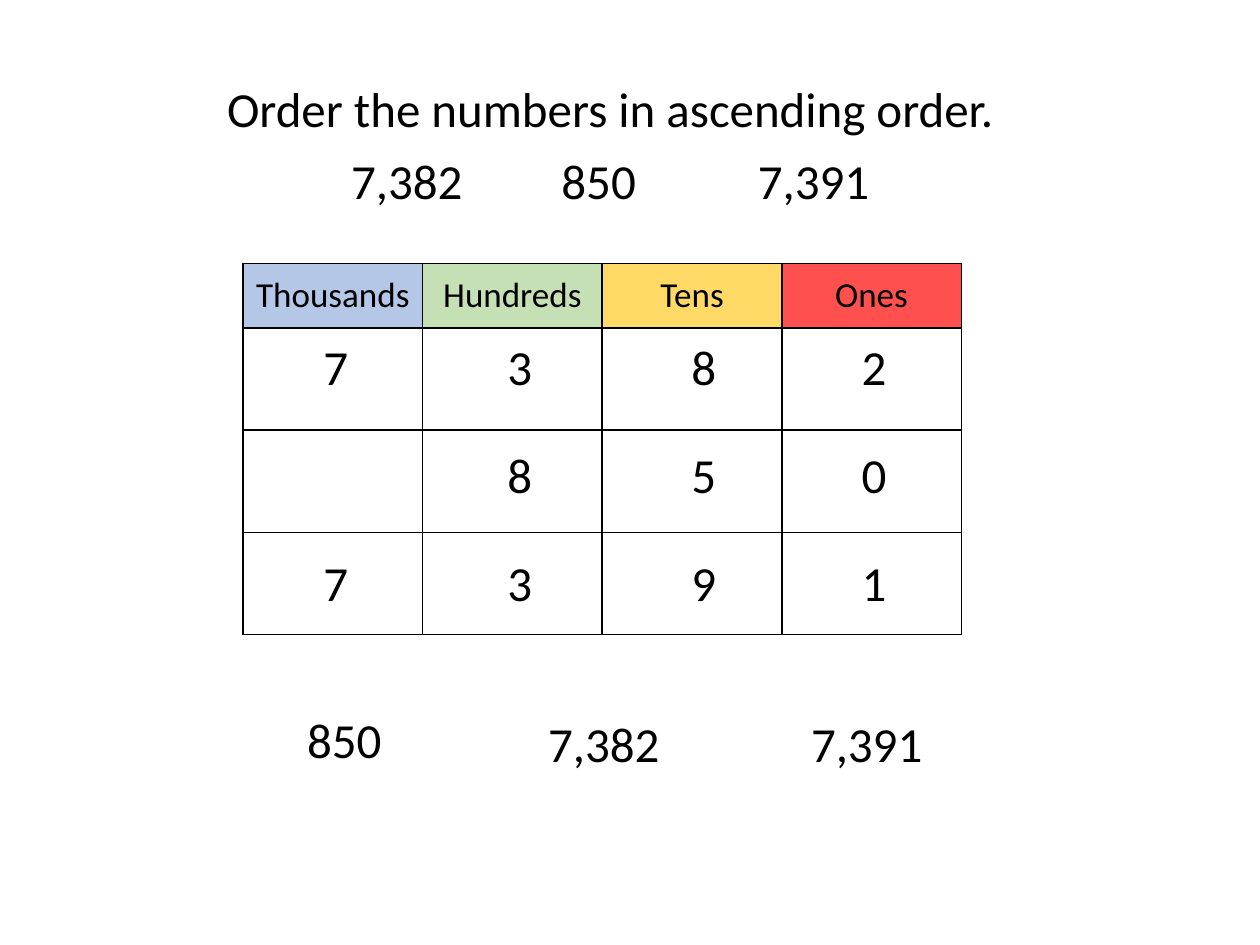
from typing import NamedTuple

from lxml.etree import SubElement
from pptx import Presentation
from pptx.dml.color import RGBColor
from pptx.enum.text import MSO_ANCHOR, MSO_AUTO_SIZE, PP_ALIGN
from pptx.oxml.ns import qn
from pptx.util import Cm, Pt

BLACK = RGBColor(0x00, 0x00, 0x00)
BLUE = RGBColor(0xB4, 0xC7, 0xE7)
GREEN = RGBColor(0xC5, 0xE0, 0xB4)
YELLOW = RGBColor(0xFF, 0xD9, 0x66)
RED = RGBColor(0xFF, 0x50, 0x50)
FONT_NAME = "Calibri"
LINE_HEIGHT = 1.45


class PlaceColumn(NamedTuple):
    heading: str
    color: RGBColor
    digit_left: float


class Answer(NamedTuple):
    text: str
    left: float
    top: float


PLACE_COLUMNS = [
    PlaceColumn("Thousands", BLUE, 6.27),
    PlaceColumn("Hundreds", GREEN, 9.98),
    PlaceColumn("Tens", YELLOW, 13.69),
    PlaceColumn("Ones", RED, 17.12),
]
NUMBERS = ["7,382", "850", "7,391"]
ANSWERS = [
    Answer("850", 5.94, 14.17),
    Answer("7,382", 10.8, 14.25),
    Answer("7,391", 16.1, 14.25),
]


def write_text(text_frame, text: str, size: float = 28, alignment=PP_ALIGN.LEFT, tab_stops=()) -> None:
    paragraph = text_frame.paragraphs[0]
    paragraph.text = text
    paragraph.alignment = alignment
    if tab_stops:
        tab_list = SubElement(paragraph._p.get_or_add_pPr(), qn("a:tabLst"))
        for position in tab_stops:
            SubElement(tab_list, qn("a:tab"), pos=str(Cm(position)), algn="l")
    font = paragraph.runs[0].font
    font.name = FONT_NAME
    font.size = Pt(size)
    font.color.rgb = BLACK


def add_text(slide, text: str, left: float, top: float, width: float, **text_format):
    shape = slide.shapes.add_textbox(Cm(left), Cm(top), Cm(width), Cm(LINE_HEIGHT))
    text_frame = shape.text_frame
    text_frame.word_wrap = True
    text_frame.auto_size = MSO_AUTO_SIZE.SHAPE_TO_FIT_TEXT
    write_text(text_frame, text, **text_format)
    return shape


def format_title(slide, text: str) -> None:
    title = slide.shapes.title
    title.left, title.top = Cm(1.85), Cm(1.45)
    title.width, title.height = Cm(20.9), Cm(LINE_HEIGHT)
    title.text_frame.vertical_anchor = MSO_ANCHOR.TOP
    title.text_frame.auto_size = MSO_AUTO_SIZE.SHAPE_TO_FIT_TEXT
    write_text(title.text_frame, text, alignment=PP_ALIGN.CENTER)


def add_borders(cell) -> None:
    properties = cell._tc.get_or_add_tcPr()
    for side in ("lnL", "lnR", "lnT", "lnB"):
        line = SubElement(properties, qn(f"a:{side}"), w=str(Pt(1)))
        fill = SubElement(line, qn("a:solidFill"))
        SubElement(fill, qn("a:srgbClr"), val=str(BLACK))


def add_place_value_table(slide) -> None:
    row_heights = [1.3] + [2.06] * len(NUMBERS)
    column_width = 3.62
    table = slide.shapes.add_table(
        len(row_heights), len(PLACE_COLUMNS), Cm(4.9), Cm(5.31),
        Cm(column_width * len(PLACE_COLUMNS)), Cm(sum(row_heights)),
    ).table
    for row, height in zip(table.rows, row_heights):
        row.height = Cm(height)
    for column in table.columns:
        column.width = Cm(column_width)
    for cell in table.iter_cells():
        add_borders(cell)
        cell.fill.background()
    for cell, place in zip(table.rows[0].cells, PLACE_COLUMNS):
        cell.fill.solid()
        cell.fill.fore_color.rgb = place.color
        cell.vertical_anchor = MSO_ANCHOR.MIDDLE
        write_text(cell.text_frame, place.heading, size=20, alignment=PP_ALIGN.CENTER)
        cell.text_frame.paragraphs[0].runs[0].font.bold = False


def add_digits(slide) -> None:
    for row, number in enumerate(NUMBERS):
        digits = number.replace(",", "").rjust(len(PLACE_COLUMNS))
        for digit, place in zip(digits, PLACE_COLUMNS):
            if digit.isdigit():
                add_text(slide, digit, place.digit_left, 6.65 + 2.18 * row, 1.37)


def main() -> None:
    presentation = Presentation()
    presentation.slide_width = Cm(25.4)
    presentation.slide_height = Cm(19.05)
    slide = presentation.slides.add_slide(presentation.slide_layouts[5])
    format_title(slide, "Order the numbers in ascending order.")
    number_line = add_text(slide, "\t".join(NUMBERS), 1.85, 2.9, 20.9, tab_stops=(4.24, 8.2))
    number_line.text_frame.margin_left = Cm(5.23)
    add_digits(slide)
    for answer in ANSWERS:
        add_text(slide, answer.text, answer.left, answer.top, 3.25)
    add_place_value_table(slide)
    presentation.save("out.pptx")


if __name__ == "__main__":
    main()
